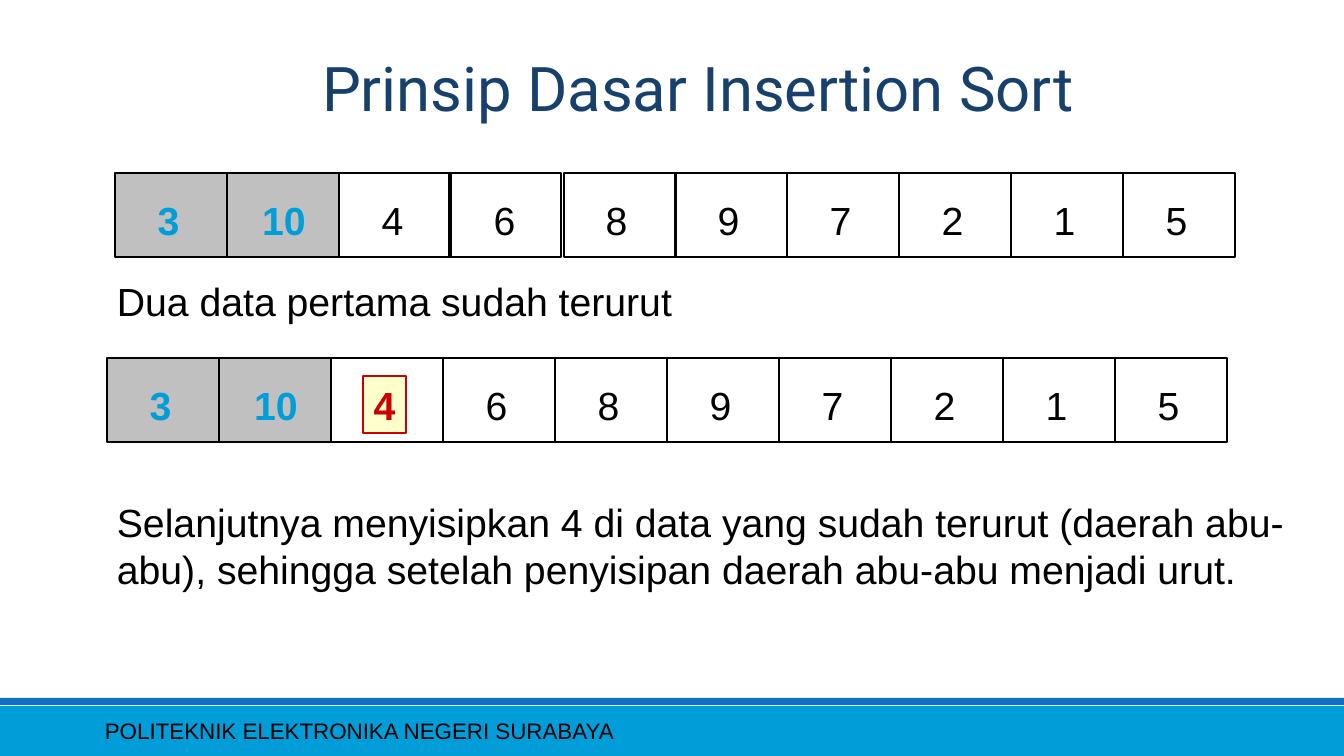
from dataclasses import dataclass
from pptx import Presentation
from pptx.dml.color import RGBColor
from pptx.enum.shapes import MSO_SHAPE as SHAPE
from pptx.enum.text import MSO_ANCHOR as ANCHOR, PP_ALIGN as ALIGN
from pptx.util import Emu, Pt

TITLE = "Prinsip Dasar Insertion Sort"
FOOTER = "POLITEKNIK ELEKTRONIKA NEGERI SURABAYA"
VALUES = [3, 10, 4, 6, 8, 9, 7, 2, 1, 5]
SORTED_COUNT = 2
ROWS = [
    {"x": 115, "y": 173, "nudge": {3: -2, 4: 1}, "inserting": None},
    {"x": 107, "y": 358, "nudge": {}, "inserting": 2},
]
CAPTIONS = [
    ("Dua data pertama sudah terurut", (107, 272, 1187, 57)),
    ("Selanjutnya menyisipkan 4 di data yang sudah terurut (daerah abu-abu), "
     "sehingga setelah penyisipan daerah abu-abu menjadi urut.",
     (107, 493, 1187, 153)),
]


@dataclass(frozen=True)
class Theme:
    black: str = "000000"
    white: str = "FFFFFF"
    navy: str = "17406D"
    blue: str = "009DD9"
    stripe: str = "0F6FC6"
    gray: str = "C0C0C0"
    red: str = "CC0000"
    cream: str = "FFFFCC"
    body_font: str = "Arial"
    title_font: str = "Roboto"
    title_size: int = 44
    body_size: int = 28
    footer_size: int = 16
    line_width: float = 1.5


T = Theme()
SLIDE_W, SLIDE_H = 1344, 756
CELL_W, CELL_H = 112, 84
LABEL_Y, LABEL_H = 18, 57


def px(n):
    return Emu(round(n * 914400 / 100.8))


def box(*lengths):
    return [px(n) for n in lengths]


def write(sp, text, size=T.body_size, color=T.black, font=T.body_font,
          bold=False, align=ALIGN.LEFT, anchor=ANCHOR.TOP, wrap=True):
    tf = sp.text_frame
    tf.word_wrap = wrap
    tf.vertical_anchor = anchor
    p = tf.paragraphs[0]
    p.alignment = align
    r = p.add_run()
    r.text = text
    r.font.size = Pt(size)
    r.font.name = font
    r.font.bold = bold
    r.font.color.rgb = RGBColor.from_string(color)


def add_rect(shapes, at, fill=None, line=None):
    sp = shapes.add_shape(SHAPE.RECTANGLE, *box(*at))
    sp.shadow.inherit = False
    if fill:
        sp.fill.solid()
        sp.fill.fore_color.rgb = RGBColor.from_string(fill)
    else:
        sp.fill.background()
    if line:
        sp.line.color.rgb = RGBColor.from_string(line)
        sp.line.width = Pt(T.line_width)
    else:
        sp.line.fill.background()
    return sp


def add_text(shapes, text, at, **fmt):
    write(shapes.add_textbox(*box(*at)), text, **fmt)


def add_row(slide, x, y, nudge, inserting):
    shapes = slide.shapes.add_group_shape().shapes
    for i in range(len(VALUES)):
        left = x + i * CELL_W + nudge.get(i, 0)
        fill = T.gray if i < SORTED_COUNT else None
        add_rect(shapes, (left, y, CELL_W, CELL_H), fill, T.black)
    for i, value in enumerate(VALUES):
        text = str(value)
        offset, width = (32, 43) if len(text) == 1 else (25, 64)
        at = (x + i * CELL_W + offset, y + LABEL_Y, width, LABEL_H)
        fmt = {"align": ALIGN.CENTER, "wrap": False}
        if i == inserting:
            sp = add_rect(shapes, at, T.cream, T.red)
            write(sp, text, color=T.red, bold=True, **fmt)
        elif i < SORTED_COUNT:
            add_text(shapes, text, at, color=T.blue, bold=True, **fmt)
        else:
            add_text(shapes, text, at, **fmt)


def main():
    prs = Presentation()
    prs.slide_width, prs.slide_height = box(SLIDE_W, SLIDE_H)
    s = prs.slides.add_slide(prs.slide_layouts[5])

    title = s.shapes.title
    title.left, title.top, title.width, title.height = box(126, 24, 1145, 126)
    write(title, TITLE, size=T.title_size, color=T.navy, font=T.title_font,
          align=ALIGN.CENTER, anchor=ANCHOR.MIDDLE)

    add_rect(s.shapes, (0, 706, SLIDE_W, 50), T.blue)
    add_rect(s.shapes, (0, 698, SLIDE_W, 7), T.stripe)
    add_text(s.shapes, FOOTER, (95, 711, 848, 40), size=T.footer_size,
             anchor=ANCHOR.MIDDLE)

    for text, at in CAPTIONS:
        add_text(s.shapes, text, at)
    for row in ROWS:
        add_row(s, **row)

    prs.save("out.pptx")


if __name__ == "__main__":
    main()
